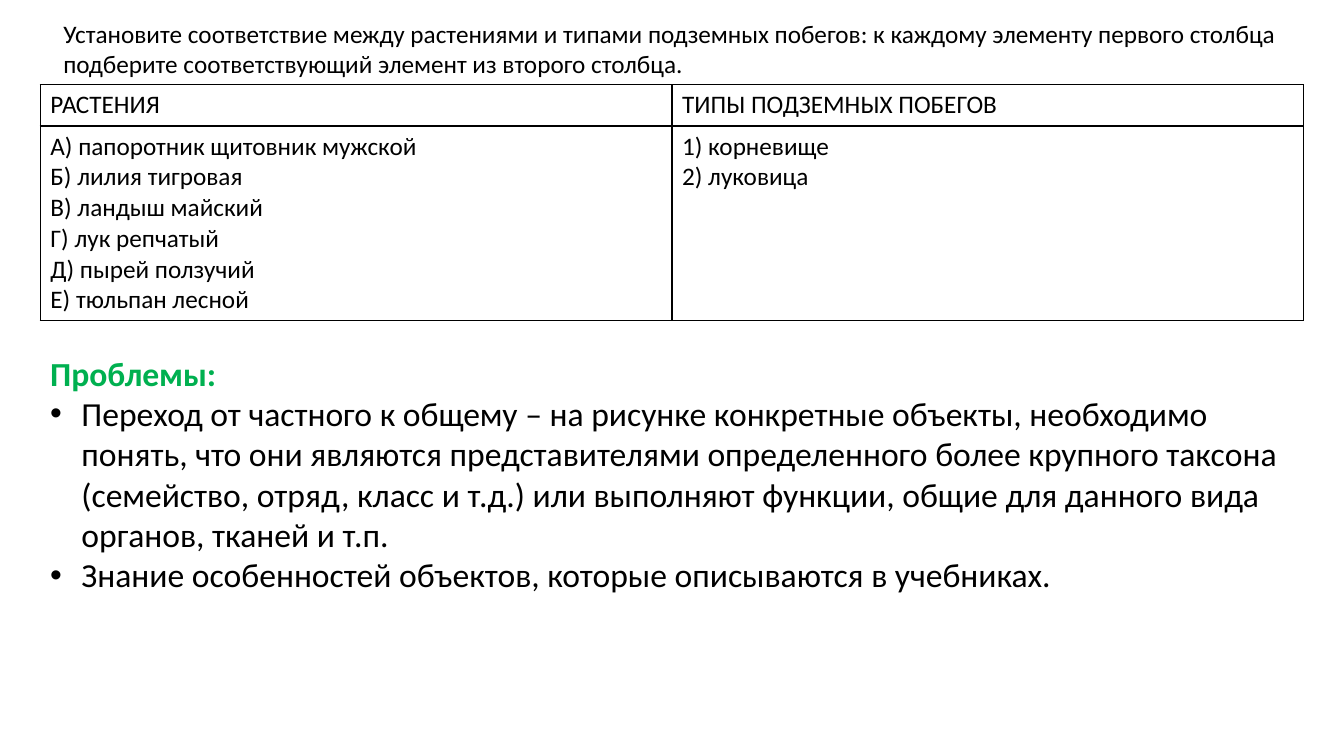
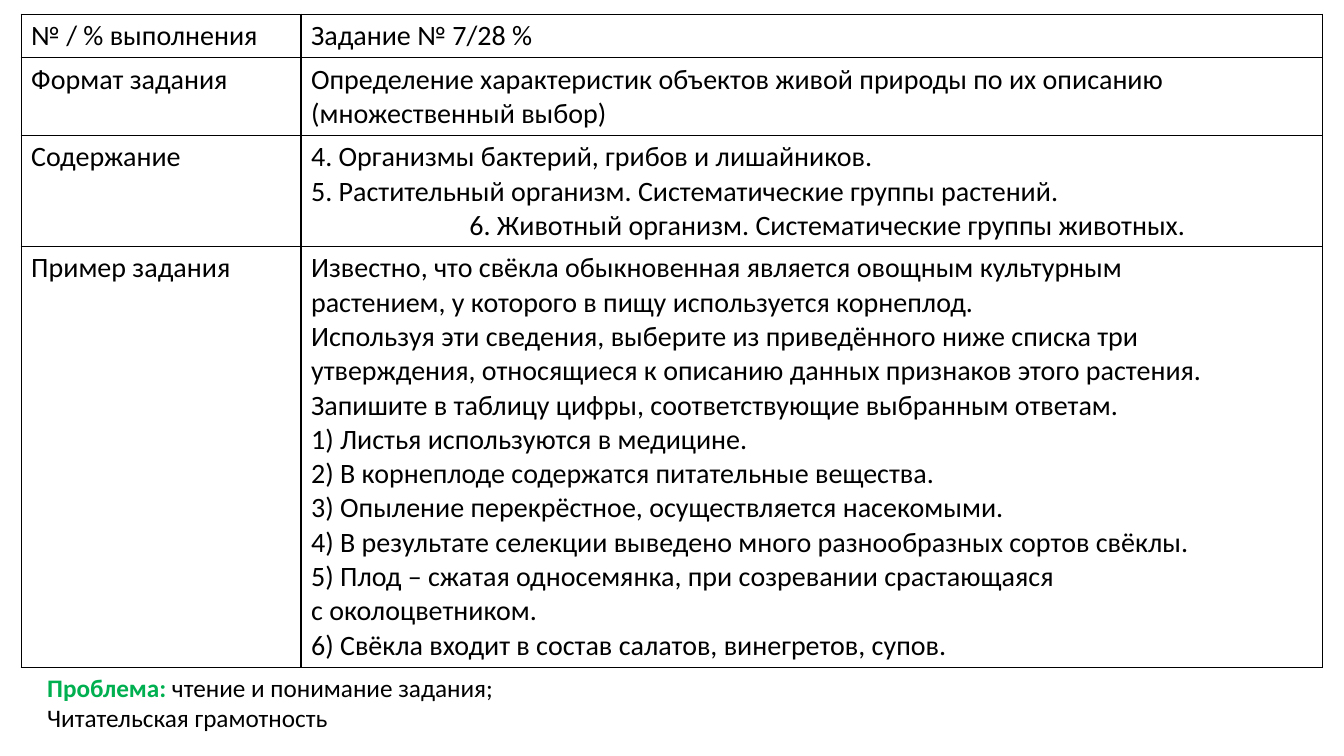
"""Two slides on biology tasks: a bordered task table with notes on pupils' problems."""
import dataclasses

import pptx
import pptx.dml.color
import pptx.oxml
import pptx.oxml.ns
import pptx.util

RGBColor = pptx.dml.color.RGBColor
Inches = pptx.util.Inches
BLACK = RGBColor(0x00, 0x00, 0x00)
GREEN = RGBColor(0x00, 0xB0, 0x50)
FONT = "Calibri"
SLIDE_WIDTH, SLIDE_HEIGHT = 13.33, 7.5
BULLET_INDENT = 0.31


@dataclasses.dataclass
class Paragraph:
    text: str = ""
    heading: str = ""
    bullet: bool = False
    indent: float = 0


def lines(*texts):
    return [Paragraph(text) for text in texts]


MATCHING_TASK = lines(
    "Установите соответствие между растениями и типами подземных побегов: к каждому элементу "
    "первого столбца подберите соответствующий элемент из второго столбца.")

PLANTS = [
    (lines("РАСТЕНИЯ"), lines("ТИПЫ ПОДЗЕМНЫХ ПОБЕГОВ")),
    (lines("А) папоротник щитовник мужской", "Б) лилия тигровая", "В) ландыш майский",
           "Г) лук репчатый", "Д) пырей ползучий", "Е) тюльпан лесной"),
     lines("1) корневище", "2) луковица")),
]

PROBLEMS = [
    Paragraph(heading="Проблемы:"),
    Paragraph("Переход от частного к общему – на рисунке конкретные объекты, необходимо понять, "
              "что они являются представителями определенного более крупного таксона (семейство, "
              "отряд, класс и т.д.) или выполняют функции, общие для данного вида органов, "
              "тканей и т.п.", bullet=True),
    Paragraph("Знание особенностей объектов, которые описываются в учебниках.", bullet=True),
]

TASK_SEVEN = [
    (lines("№ / % выполнения"), lines("Задание № 7/28 %")),
    (lines("Формат задания"),
     lines("Определение характеристик объектов живой природы по их описанию "
           "(множественный выбор)")),
    (lines("Содержание"),
     lines("4. Организмы бактерий, грибов и лишайников.",
           "5. Растительный организм. Систематические группы растений.")
     + [Paragraph("6. Животный организм. Систематические группы животных.", indent=1.57)]),
    (lines("Пример задания"),
     lines("Известно, что свёкла обыкновенная является овощным культурным",
           "растением, у которого в пищу используется корнеплод.",
           "Используя эти сведения, выберите из приведённого ниже списка три",
           "утверждения, относящиеся к описанию данных признаков этого растения.",
           "Запишите в таблицу цифры, соответствующие выбранным ответам.",
           "1) Листья используются в медицине.",
           "2) В корнеплоде содержатся питательные вещества.",
           "3) Опыление перекрёстное, осуществляется насекомыми.",
           "4) В результате селекции выведено много разнообразных сортов свёклы.",
           "5) Плод – сжатая односемянка, при созревании срастающаяся",
           "с околоцветником.",
           "6) Свёкла входит в состав салатов, винегретов, супов.")),
]

READING_PROBLEM = [
    Paragraph("чтение и понимание задания;", heading="Проблема: "),
    Paragraph("Читательская грамотность"),
]


def add_xml(parent, tag, **attributes):
    element = pptx.oxml.parse_xml(f"<a:{tag} {pptx.oxml.ns.nsdecls('a')}/>")
    for key, value in attributes.items():
        element.set(key, str(value))
    parent.append(element)
    return element


def write(frame, paragraphs, size):
    frame.word_wrap = True
    for index, content in enumerate(paragraphs):
        paragraph = frame.paragraphs[0] if index == 0 else frame.add_paragraph()
        properties = paragraph._p.get_or_add_pPr()
        if content.bullet:
            properties.set("marL", str(Inches(BULLET_INDENT)))
            properties.set("indent", str(-Inches(BULLET_INDENT)))
            add_xml(properties, "buFont", typeface="Arial")
            add_xml(properties, "buChar", char="•")
        elif content.indent:
            properties.set("marL", str(Inches(content.indent)))
        for text, colour, bold in ((content.heading, GREEN, True), (content.text, BLACK, False)):
            if text:
                run = paragraph.add_run()
                run.text = text
                run.font.name = FONT
                run.font.size = pptx.util.Pt(size)
                run.font.bold = bold
                run.font.color.rgb = colour


def add_note(slide, paragraphs, size, left, top, width, height):
    box = slide.shapes.add_textbox(*map(Inches, (left, top, width, height)))
    write(box.text_frame, paragraphs, size)


def add_borders(cell):
    properties = cell._tc.get_or_add_tcPr()
    for side in ("lnL", "lnR", "lnT", "lnB"):
        border = add_xml(properties, side, w=pptx.util.Pt(1))
        add_xml(add_xml(border, "solidFill"), "srgbClr", val=BLACK)


def add_grid(slide, rows, size, left, top, width, shares, heights):
    frame = slide.shapes.add_table(len(rows), len(shares),
                                   *map(Inches, (left, top, width, sum(heights))))
    table = frame.table
    table.first_row = table.horz_banding = False
    for column, share in zip(table.columns, shares):
        column.width = Inches(width * share)
    for row, height, contents in zip(table.rows, heights, rows):
        row.height = Inches(height)
        for cell, paragraphs in zip(row.cells, contents):
            add_borders(cell)
            cell.fill.background()
            write(cell.text_frame, paragraphs, size)


def main():
    deck = pptx.Presentation()
    deck.slide_width, deck.slide_height = Inches(SLIDE_WIDTH), Inches(SLIDE_HEIGHT)
    blank = deck.slide_layouts[6]

    matching = deck.slides.add_slide(blank)
    add_grid(matching, PLANTS, 18, 0.4, 0.84, 12.53, (0.5, 0.5), (0.41, 1.9))
    add_note(matching, MATCHING_TASK, 18, 0.53, 0.13, 12.8, 0.71)
    add_note(matching, PROBLEMS, 24, 0.4, 3.45, 12.44, 2.93)

    description = deck.slides.add_slide(blank)
    add_grid(description, TASK_SEVEN, 20, 0.21, 0.14, 12.91, (0.215, 0.785),
             (0.43, 0.76, 1.1, 4.18))
    add_note(description, READING_PROBLEM, 18, 0.37, 6.62, 10.65, 0.71)

    deck.save("out.pptx")


if __name__ == "__main__":
    main()
